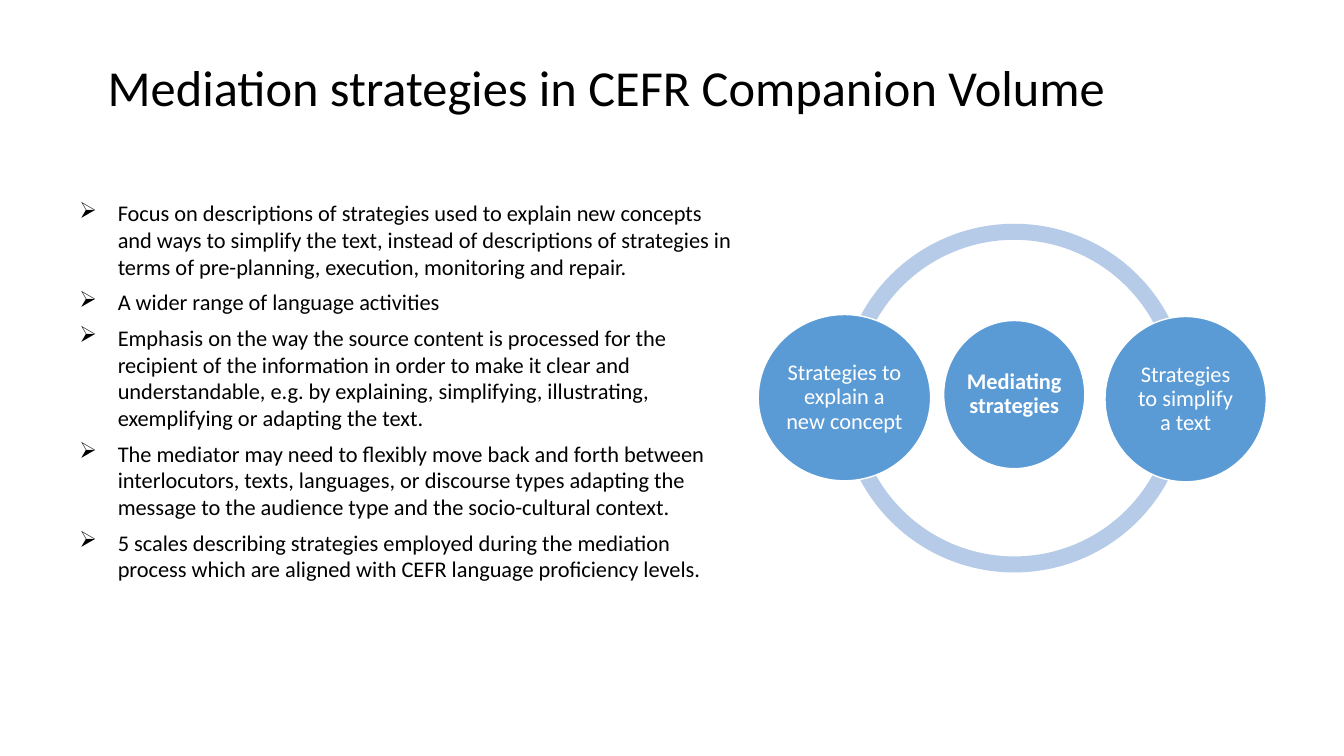
from lxml import etree
from pptx import Presentation
from pptx.dml.color import RGBColor
from pptx.enum.shapes import MSO_SHAPE as SHAPE
from pptx.enum.text import MSO_ANCHOR as ANCHOR, PP_ALIGN as ALIGN
from pptx.oxml.ns import qn
from pptx.util import Inches, Pt

BLACK = RGBColor(0x00, 0x00, 0x00)
WHITE = RGBColor(0xFF, 0xFF, 0xFF)
BLUE = RGBColor(0x5B, 0x9B, 0xD5)
PALE_BLUE = RGBColor(0xB5, 0xCB, 0xE7)

FONT = "Calibri"
BULLET = "➢"
BULLET_INDENT = Inches(0.38)

TITLE = "Mediation strategies in CEFR Companion Volume"
POINTS = [
    "Focus on descriptions of strategies used to explain new concepts and ways "
    "to simplify the text, instead of descriptions of strategies in terms of "
    "pre-planning, execution, monitoring and repair.",
    "A wider range of language activities",
    "Emphasis on the way the source content is processed for the recipient of "
    "the information in order to make it clear and understandable, e.g. by "
    "explaining, simplifying, illustrating, exemplifying or adapting the text.",
    "The mediator may need to flexibly move back and forth between "
    "interlocutors, texts, languages, or discourse types adapting the message "
    "to the audience type and the socio-cultural context.",
    "5 scales describing strategies employed during the mediation process "
    "which are aligned with CEFR language proficiency levels.",
]
# text, left, top, width, height, bold
CIRCLES = [
    ("Mediating strategies", 9.36, 3.18, 1.4, 1.47, True),
    ("Strategies to explain a new concept", 7.52, 3.12, 1.71, 1.65, False),
    ("Strategies to simplify a text", 10.96, 3.14, 1.6, 1.64, False),
]
RING = (8.33, 2.22, 3.46, 3.46)
RING_THICKNESS = 0.046
# Start and end angles of the upper and lower half, in units of 100000/60000 degree
RING_HALVES = [(0.2, 108.2), (108.2, 0.2)]


def add_bullet(p):
    pPr = p._p.get_or_add_pPr()
    pPr.set("marL", str(BULLET_INDENT))
    pPr.set("indent", str(-BULLET_INDENT))
    etree.SubElement(pPr, qn("a:buChar")).set("char", BULLET)


def write_text(tf, paragraphs, size=16, color=BLACK, bold=False, align=ALIGN.LEFT,
               anchor=ANCHOR.TOP, line_spacing=None, space_before=0, bullets=False):
    tf.word_wrap = True
    tf.vertical_anchor = anchor
    for i, text in enumerate(paragraphs):
        p = tf.add_paragraph() if i else tf.paragraphs[0]
        p.alignment = align
        if line_spacing:
            p.line_spacing = line_spacing
        if i:
            p.space_before = Pt(space_before)
        if bullets:
            add_bullet(p)
        r = p.add_run()
        r.text = text
        r.font.name = FONT
        r.font.size = Pt(size)
        r.font.bold = bold
        r.font.color.rgb = color


def add_text(slide, box, paragraphs, **text_format):
    sp = slide.shapes.add_textbox(*map(Inches, box))
    write_text(sp.text_frame, paragraphs, **text_format)


def add_filled(slide, kind, box, fill):
    sp = slide.shapes.add_shape(kind, *map(Inches, box))
    sp.shadow.inherit = False
    sp.fill.solid()
    sp.fill.fore_color.rgb = fill
    sp.line.fill.background()
    return sp


def add_ring_half(slide, start, end):
    sp = add_filled(slide, SHAPE.BLOCK_ARC, RING, PALE_BLUE)
    for i, value in enumerate((start, end, RING_THICKNESS)):
        sp.adjustments[i] = value


def add_circle(slide, text, box, bold):
    sp = add_filled(slide, SHAPE.OVAL, box, BLUE)
    sp.line.color.rgb = WHITE
    sp.line.width = Pt(1)
    tf = sp.text_frame
    tf.margin_left = tf.margin_right = Inches(0.02)
    tf.margin_top = tf.margin_bottom = Inches(0.02)
    write_text(tf, [text], color=WHITE, bold=bold, align=ALIGN.CENTER,
               anchor=ANCHOR.MIDDLE, line_spacing=0.9)


def main():
    prs = Presentation()
    prs.slide_width, prs.slide_height = Inches(13.33), Inches(7.5)
    slide = prs.slides.add_slide(prs.slide_layouts[6])

    # Title and bullet list
    add_text(slide, (0.97, 0.31, 10.63, 0.9), [TITLE], size=36, anchor=ANCHOR.BOTTOM)
    add_text(slide, (0.69, 1.93, 6.7, 4.05), POINTS, space_before=6, bullets=True)

    # Ring with its circles
    for start, end in RING_HALVES:
        add_ring_half(slide, start, end)
    for text, *box, bold in CIRCLES:
        add_circle(slide, text, box, bold)

    prs.save("out.pptx")


if __name__ == "__main__":
    main()
